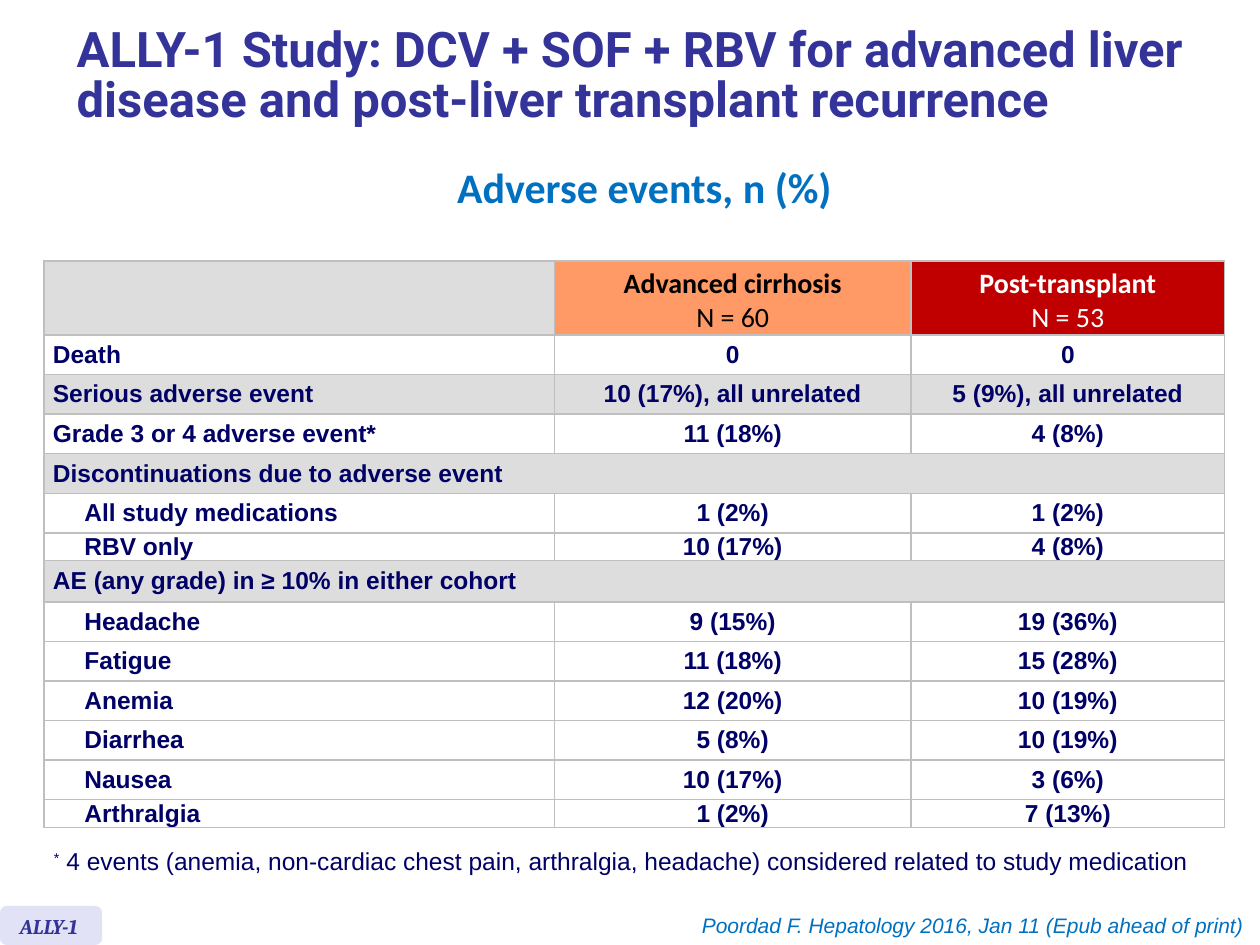
import pptx
import pptx.util
import pptx.dml.color
import pptx.enum.shapes
import pptx.enum.text
import pptx.oxml
import pptx.oxml.ns

Inches = pptx.util.Inches
Pt = pptx.util.Pt
ALIGN = pptx.enum.text.PP_ALIGN
ANCHOR = pptx.enum.text.MSO_ANCHOR

COLORS = {
    "white": "FFFFFF", "black": "000000", "gray": "DDDDDD", "edge": "BFBFBF",
    "orange": "FF9966", "red": "C00000", "ink": "000066", "blue": "0070C0",
    "indigo": "333399", "pale": "E2E2F6",
}
HEADS = [
    ("Advanced cirrhosis", "N = 60", "orange", "black", 0.03),
    ("Post-transplant", "N = 53", "red", "white", 0.1),
]
ROWS = [
    (0, "Death", "0", "0"),
    (0, "Serious adverse event", "10 (17%), all unrelated", "5 (9%), all unrelated"),
    (0, "Grade 3 or 4 adverse event*", "11 (18%)", "4 (8%)"),
    (0, "Discontinuations due to adverse event"),
    (1, "All study medications", "1 (2%)", "1 (2%)"),
    (1, "RBV only", "10 (17%)", "4 (8%)"),
    (0, "AE (any grade) in ≥ 10% in either cohort"),
    (1, "Headache", "9 (15%)", "19 (36%)"),
    (1, "Fatigue", "11 (18%)", "15 (28%)"),
    (1, "Anemia", "12 (20%)", "10 (19%)"),
    (1, "Diarrhea", "5 (8%)", "10 (19%)"),
    (1, "Nausea", "10 (17%)", "3 (6%)"),
    (1, "Arthralgia", "1 (2%)", "7 (13%)"),
]
SHADED = {"Serious adverse event"}
COLS = [4.05, 2.83, 2.49]
HEAD, GROUP, TIGHT, TOTAL = 0.59, 0.33, 0.22, 4.5
PLAIN = (TOTAL - HEAD - GROUP - 2 * TIGHT) / 10
HEIGHTS = {"RBV only": TIGHT, "Arthralgia": TIGHT, ROWS[6][1]: GROUP}


def tint(name):
    return pptx.dml.color.RGBColor.from_string(COLORS[name])


def write(para, text, font="Arial", size=14, color="ink", bold=False,
          slant=False, align=ALIGN.LEFT, line=None, raised=False):
    para.alignment = align
    if line:
        para.line_spacing = line
    run = para.add_run()
    run.text = text
    run.font.name = font
    run.font.size = Pt(size)
    run.font.bold = bold
    run.font.italic = slant
    run.font.color.rgb = tint(color)
    if raised:
        run._r.get_or_add_rPr().set("baseline", "30000")


class Deck:
    def __init__(self):
        self.show = pptx.Presentation()
        self.show.slide_width = Inches(10)
        self.show.slide_height = Inches(7.5)
        self.slide = self.show.slides.add_slide(self.show.slide_layouts[6])

    def text(self, box, text, home=None, grow=True, **style):
        home = home or self.slide.shapes
        frame = home.add_textbox(*map(Inches, box)).text_frame
        frame.word_wrap = True
        if grow:
            frame.auto_size = pptx.enum.text.MSO_AUTO_SIZE.SHAPE_TO_FIT_TEXT
        else:
            frame.vertical_anchor = ANCHOR.MIDDLE
        write(frame.paragraphs[0], text, **style)
        return frame

    def badge(self, text):
        home = self.slide.shapes.add_group_shape().shapes
        kind = pptx.enum.shapes.MSO_SHAPE.ROUNDED_RECTANGLE
        shape = home.add_shape(kind, *map(Inches, (0, 7.19, 0.81, 0.31)))
        shape.shadow.inherit = False
        shape.fill.solid()
        shape.fill.fore_color.rgb = tint("pale")
        shape.line.fill.background()
        self.text((0.06, 7.2, 0.88, 0.3), text, home, font="Cambria",
                  size=12, color="indigo", bold=True, slant=True)

    def cell(self, cell, fill, inset=0.07, anchor=ANCHOR.MIDDLE):
        props = cell._tc.get_or_add_tcPr()
        for side in "LRTB":
            props.append(pptx.oxml.parse_xml(
                f'<a:ln{side} {pptx.oxml.ns.nsdecls("a")} w="12700"><a:solidFill>'
                f'<a:srgbClr val="{COLORS["edge"]}"/></a:solidFill></a:ln{side}>'))
        cell.fill.solid()
        cell.fill.fore_color.rgb = tint(fill)
        cell.margin_left = cell.margin_right = Inches(inset)
        cell.margin_top = cell.margin_bottom = 0
        cell.vertical_anchor = anchor
        return cell.text_frame

    def table(self):
        box = map(Inches, (0.35, 2.07, sum(COLS), TOTAL))
        grid = self.slide.shapes.add_table(len(ROWS) + 1, len(COLS), *box).table
        for col, width in zip(grid.columns, COLS):
            col.width = Inches(width)
        grid.rows[0].height = Inches(HEAD)
        self.cell(grid.cell(0, 0), "gray")
        for col, (name, count, fill, color, inset) in enumerate(HEADS, 1):
            frame = self.cell(grid.cell(0, col), fill, inset, ANCHOR.BOTTOM)
            style = dict(font="Calibri", size=16, color=color, align=ALIGN.CENTER)
            write(frame.paragraphs[0], name, bold=True, **style)
            write(frame.add_paragraph(), count, **style)
        for row, (level, label, *values) in enumerate(ROWS, 1):
            grid.rows[row].height = Inches(HEIGHTS.get(label, PLAIN))
            fill = "gray" if label in SHADED or not values else "white"
            frames = [self.cell(grid.cell(row, col), fill) for col in range(len(COLS))]
            para = frames[0].paragraphs[0]
            if level:
                para._p.get_or_add_pPr().set("marL", str(Inches(0.25)))
            write(para, label, bold=True)
            for frame, value in zip(frames[1:], values):
                write(frame.paragraphs[0], value, bold=True, align=ALIGN.CENTER)
            if not values:
                grid.cell(row, 0).merge(grid.cell(row, len(COLS) - 1))


def main():
    deck = Deck()
    deck.table()
    note = deck.text((0.33, 6.62, 9.39, 0.38), "*", line=1.2, raised=True)
    write(note.paragraphs[0], " 4 events (anemia, non-cardiac chest pain, arthralgia, "
          "headache) considered related to study medication")
    deck.text((0.33, 1.23, 9.57, 0.5), "Adverse events, n (%)", font="Calibri",
              size=24, color="blue", bold=True, align=ALIGN.CENTER)
    deck.badge("ALLY-1")
    deck.text((0.51, 0.08, 9.49, 1.07),
              "ALLY-1 Study: DCV + SOF + RBV for advanced liver disease "
              "and post-liver transplant recurrence",
              grow=False, font="Roboto", size=28, color="indigo", bold=True, line=0.85)
    deck.text((5.39, 7.19, 4.58, 0.3),
              "Poordad F. Hepatology 2016, Jan 11 (Epub ahead of print)",
              size=12, color="blue", slant=True, align=ALIGN.RIGHT)
    deck.show.save("out.pptx")


if __name__ == "__main__":
    main()
